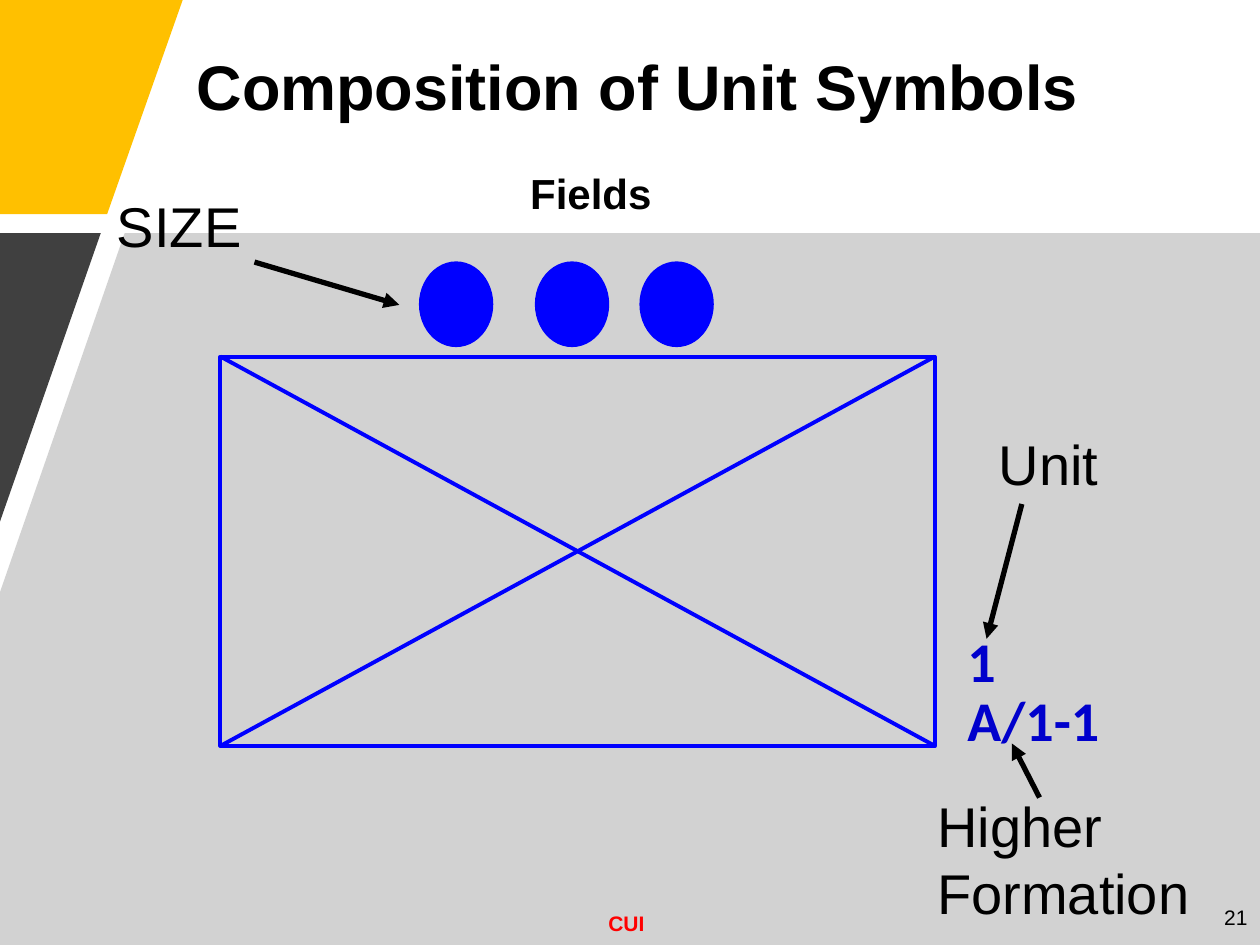
from typing import NamedTuple

from lxml.etree import SubElement
from pptx import Presentation
from pptx.dml.color import RGBColor
from pptx.enum.shapes import MSO_CONNECTOR as Link, MSO_SHAPE as Form
from pptx.enum.text import MSO_ANCHOR as Anchor, MSO_AUTO_SIZE as Auto, PP_ALIGN as Align
from pptx.oxml.ns import qn
from pptx.util import Emu, Pt

PX = 9144
BLACK = RGBColor(0, 0, 0)
RED = RGBColor(0xFF, 0, 0)
BLUE = RGBColor(0, 0, 0xFF)
NAVY = RGBColor(0, 0, 0xCC)
GOLD = RGBColor(0xFF, 0xC0, 0)
GREY = RGBColor(0xA6, 0xA6, 0xA6)
DARK = RGBColor(0x40, 0x40, 0x40)


class Box(NamedTuple):
    x: int
    y: int
    w: int
    h: int


class Patch(NamedTuple):
    points: list[tuple[int, int]]
    color: RGBColor
    alpha: int = 100


class Label(NamedTuple):
    text: str
    box: Box
    size: int
    color: RGBColor = BLACK
    bold: bool = False
    font: str = "Arial"
    wrap: bool = False
    align: Align = Align.LEFT
    anchor: Anchor = Anchor.TOP
    inset: int = 10


class Line(NamedTuple):
    start: tuple[int, int]
    end: tuple[int, int]
    color: RGBColor = BLACK
    width: float = 3
    arrow: bool = True


def scale(values: tuple[int, ...]) -> list[Emu]:
    return [Emu(v * PX) for v in values]


def draw_patch(shapes, patch: Patch) -> None:
    pen = shapes.build_freeform(*patch.points[0], scale=PX)
    pen.add_line_segments(patch.points[1:], close=True)
    shape = pen.convert_to_shape()
    shape.shadow.inherit = False
    shape.fill.solid()
    shape.fill.fore_color.rgb = patch.color
    shape.line.fill.background()
    if patch.alpha < 100:
        tint = shape.fill._xPr.find(".//" + qn("a:srgbClr"))
        SubElement(tint, qn("a:alpha"), val=str(patch.alpha * 1000))


def draw_shape(shapes, form: Form, box: Box, width: float, solid: bool) -> None:
    shape = shapes.add_shape(form, *scale(box))
    shape.shadow.inherit = False
    if solid:
        shape.fill.solid()
        shape.fill.fore_color.rgb = BLUE
    else:
        shape.fill.background()
    shape.line.color.rgb = BLUE
    shape.line.width = Pt(width)


def draw_label(shapes, label: Label) -> None:
    frame = shapes.add_textbox(*scale(label.box)).text_frame
    frame.word_wrap = label.wrap
    frame.auto_size = Auto.NONE if label.wrap else Auto.SHAPE_TO_FIT_TEXT
    frame.vertical_anchor = label.anchor
    frame.margin_left = Emu(label.inset * PX)
    frame.text = label.text
    for para in frame.paragraphs:
        para.alignment = label.align
        font = para.font
        font.name, font.size, font.bold = label.font, Pt(label.size), label.bold
        font.color.rgb = label.color


def draw_line(shapes, line: Line) -> None:
    link = shapes.add_connector(Link.STRAIGHT, *scale(line.start + line.end))
    link.line.color.rgb = line.color
    link.line.width = Pt(line.width)
    if line.arrow:
        SubElement(link.line._get_or_add_ln(), qn("a:tailEnd"), type="triangle")
    SubElement(link._element.spPr, qn("a:effectLst"))


FRAME = Box(175, 283, 567, 309)
LEFT, TOP = FRAME.x, FRAME.y
RIGHT, BASE = LEFT + FRAME.w, TOP + FRAME.h

PATCHES = [
    Patch([(0, 0), (145, 0), (85, 170), (0, 170)], GOLD),
    Patch([(99, 185), (1000, 185), (1000, 750), (0, 750), (0, 470)], GREY, 50),
    Patch([(0, 185), (80, 185), (0, 414)], DARK),
]
LABELS = [
    Label("CUI", Box(473, 718, 49, 30), 12, RED, True),
    Label("Composition of Unit Symbols", Box(0, 26, 1000, 77), 36, bold=True,
          wrap=True, align=Align.CENTER, anchor=Anchor.BOTTOM, inset=22),
    Label("Fields", Box(411, 128, 127, 50), 24, bold=True, wrap=True),
    Label("SIZE", Box(83, 147, 119, 63), 32),
    Label("Unit", Box(783, 336, 100, 64), 32),
    Label("Higher\nFormation", Box(734, 623, 222, 118), 32),
    Label("A/1-1", Box(758, 539, 130, 64), 32, NAVY, True, "Calibri"),
    Label("1", Box(758, 492, 45, 63), 32, NAVY, True, "Calibri"),
    Label("21", Box(775, 708, 225, 40), 12, wrap=True,
          align=Align.RIGHT, anchor=Anchor.MIDDLE),
]
LINES = [
    Line((202, 208), (317, 242)),
    Line((825, 633), (803, 590)),
    Line((811, 400), (783, 507)),
    Line((LEFT, TOP), (RIGHT, BASE), BLUE, 2.25, False),
    Line((LEFT, BASE), (RIGHT, TOP), BLUE, 2.25, False),
]


def main() -> None:
    deck = Presentation()
    deck.slide_width, deck.slide_height = scale((1000, 750))
    shapes = deck.slides.add_slide(deck.slide_layouts[6]).shapes
    for patch in PATCHES:
        draw_patch(shapes, patch)
    draw_shape(shapes, Form.RECTANGLE, FRAME, 2.25, False)
    for x in (333, 425, 508):
        draw_shape(shapes, Form.OVAL, Box(x, 208, 58, 67), 0.75, True)
    for label in LABELS:
        draw_label(shapes, label)
    for line in LINES:
        draw_line(shapes, line)
    deck.save("out.pptx")


if __name__ == "__main__":
    main()
